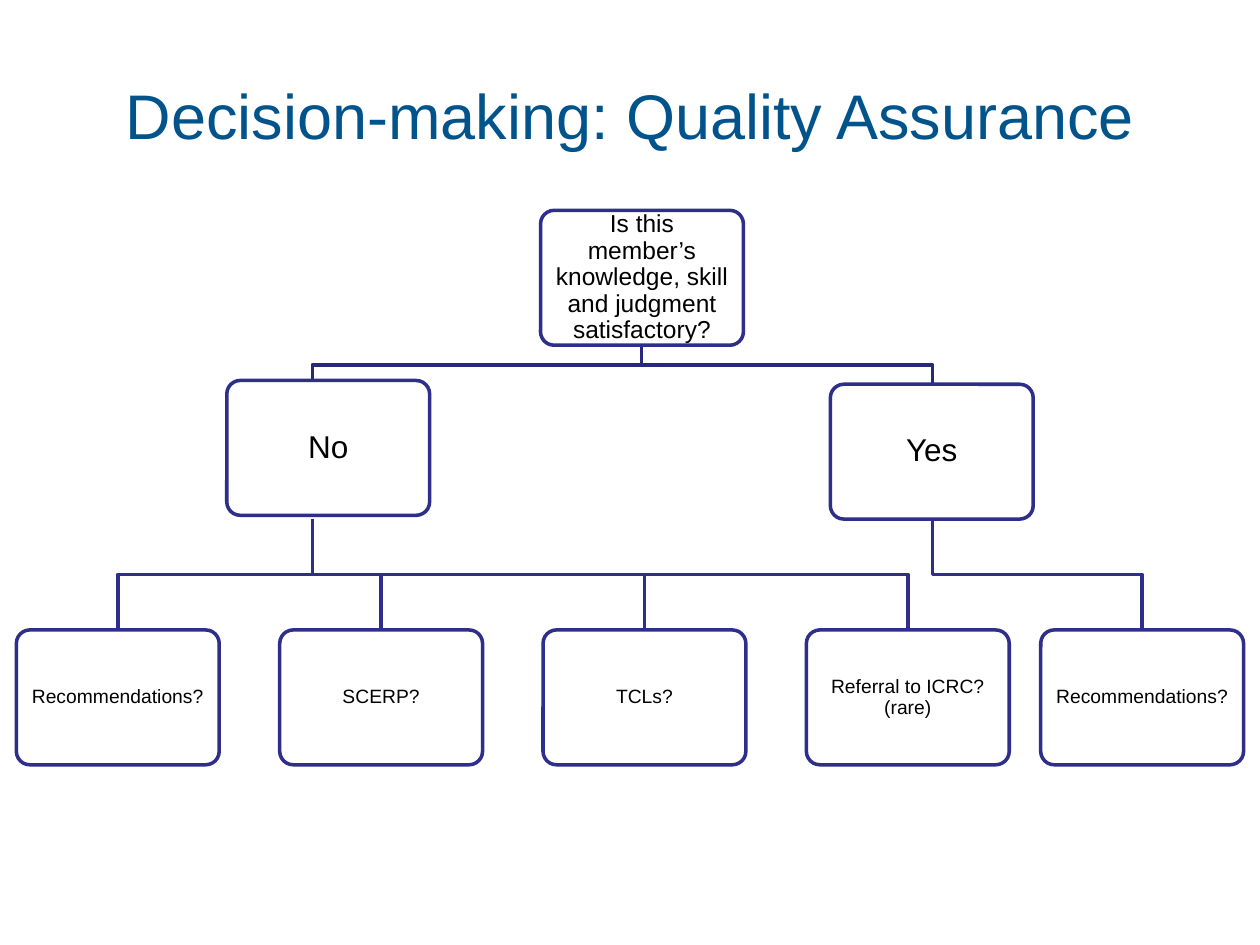
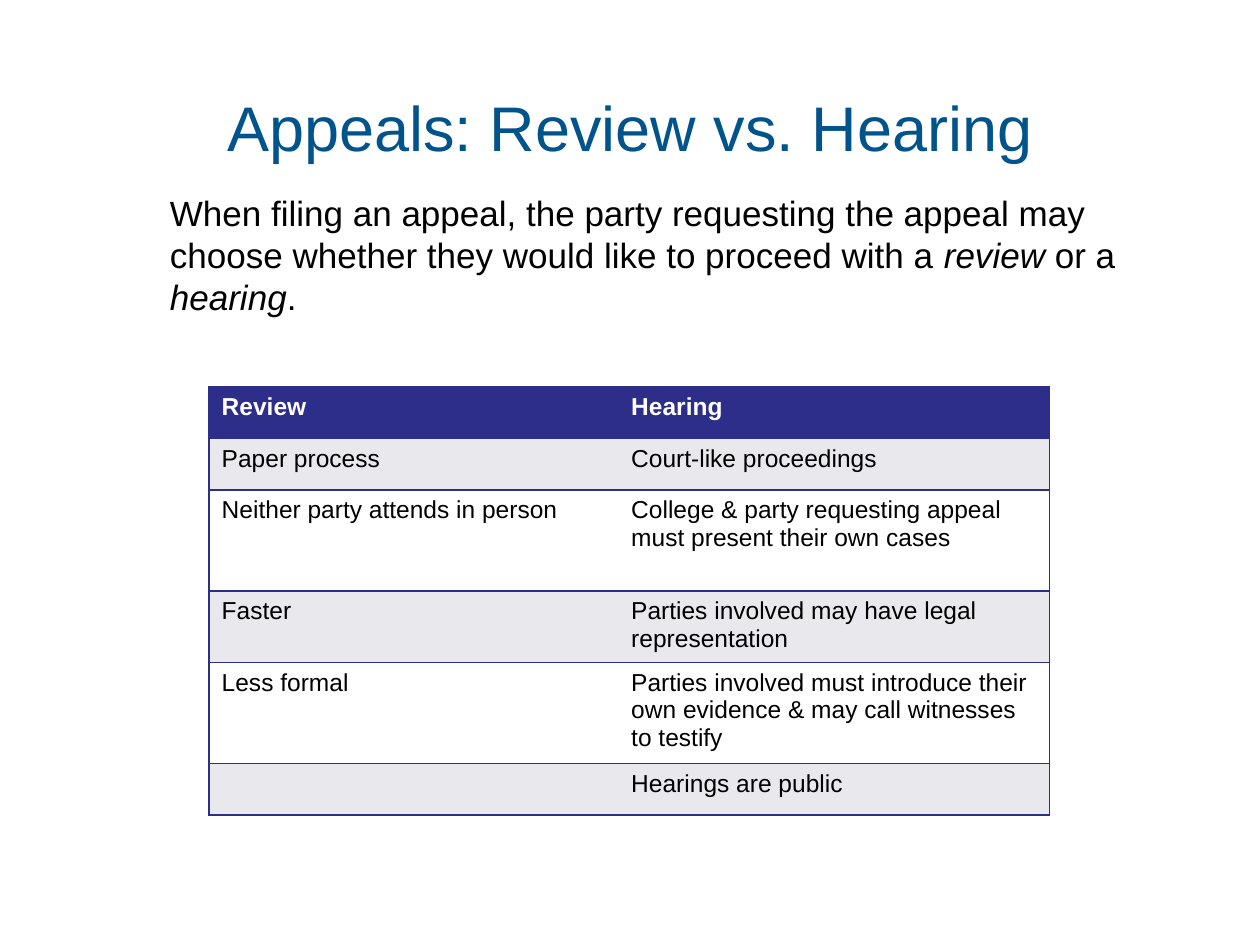
"""Build two slides: a quality assurance decision tree and a review versus hearing table."""
import pptx
import pptx.dml.color
import pptx.enum.shapes
import pptx.enum.text
import pptx.oxml
import pptx.oxml.ns
import pptx.util

Inches = pptx.util.Inches
Pt = pptx.util.Pt
RGBColor = pptx.dml.color.RGBColor
MIDDLE = pptx.enum.text.MSO_ANCHOR.MIDDLE
CENTER = pptx.enum.text.PP_ALIGN.CENTER
COLORS = {
    "title": "00548B", "text": "000000", "white": "FFFFFF", "box_line": "2E2E8B",
    "top_link": "29297B", "table": "2D2D8A", "band": "E8E8ED",
}


def add_text(paragraph, text, size, color="text", **styles):
    run = paragraph.add_run()
    run.text = text
    font_format = {"name": "Arial", "size": Pt(size), "bold": False, "italic": False, **styles}
    for name, value in font_format.items():
        setattr(run.font, name, value)
    run.font.color.rgb = RGBColor.from_string(COLORS[color])


def add_titled_slide(presentation, title, top):
    slide = presentation.slides.add_slide(presentation.slide_layouts[5])
    shape = slide.shapes.title
    place = {"left": Inches(0.71), "top": Inches(top), "width": Inches(8.58), "height": Inches(0.92)}
    for name, value in place.items():
        setattr(shape, name, value)
    shape.text_frame.vertical_anchor = MIDDLE
    shape.text_frame.auto_size = pptx.enum.text.MSO_AUTO_SIZE.NONE
    paragraph = shape.text_frame.paragraphs[0]
    paragraph.alignment = CENTER
    add_text(paragraph, title, 36, "title")
    return slide


presentation = pptx.Presentation()
presentation.slide_width = Inches(10)
presentation.slide_height = Inches(7.5)

slide = add_titled_slide(presentation, "Decision-making: Quality Assurance", 0.45)

box_width, box_height = 1.61, 1.07
leaf_top = 5
boxes = {
    "question": (4.29, 1.67, 14, "Is this member’s knowledge, skill and judgment satisfactory?"),
    "no": (1.8, 3.02, 18, "No"),
    "yes": (6.59, 3.05, 18, "Yes"),
    "yes_leaf": (8.26, leaf_top, 11, "Recommendations?"),
}
no_outcomes = ["Recommendations?", "SCERP?", "TCLs?", "Referral to ICRC? (rare)"]
for index, outcome in enumerate(no_outcomes):
    boxes[f"no_leaf_{index}"] = (0.13 + 2.09 * index, leaf_top, 11, outcome)

no_center, yes_center, question_center = 2.48, 7.4, 5.09
links = [(question_center, 2.74, center, 3.05, "top_link") for center in (no_center, yes_center)]
for name, (left, top, size, text) in boxes.items():
    if "leaf" in name:
        parent_center = yes_center if name == "yes_leaf" else no_center
        links.append((parent_center, 4.12, left + box_width / 2, leaf_top, "box_line"))

for start_x, start_y, end_x, end_y, color in links:
    bend_y = (start_y + end_y) / 2
    builder = slide.shapes.build_freeform(Inches(start_x), Inches(start_y))
    corners = [(start_x, bend_y), (end_x, bend_y), (end_x, end_y)]
    builder.add_line_segments([(Inches(x), Inches(y)) for x, y in corners], close=False)
    link = builder.convert_to_shape()
    link.shadow.inherit = False
    link.fill.background()
    link.line.color.rgb = RGBColor.from_string(COLORS[color])
    link.line.width = Pt(2)

for left, top, size, text in boxes.values():
    box = slide.shapes.add_shape(
        pptx.enum.shapes.MSO_SHAPE.ROUNDED_RECTANGLE,
        Inches(left), Inches(top), Inches(box_width), Inches(box_height))
    box.adjustments[0] = 0.1
    box.shadow.inherit = False
    box.fill.solid()
    box.fill.fore_color.rgb = RGBColor.from_string(COLORS["white"])
    box.line.color.rgb = RGBColor.from_string(COLORS["box_line"])
    box.line.width = Pt(2)
    frame_format = {"word_wrap": True, "vertical_anchor": MIDDLE}
    for side in ("left", "top", "right", "bottom"):
        frame_format[f"margin_{side}"] = Inches(0.07)
    for name, value in frame_format.items():
        setattr(box.text_frame, name, value)
    paragraph = box.text_frame.paragraphs[0]
    paragraph.alignment = CENTER
    paragraph.line_spacing = 0.9
    add_text(paragraph, text, size)

slide = add_titled_slide(presentation, "Appeals: Review vs. Hearing", 0.54)

introduction = slide.shapes.add_textbox(Inches(1.25), Inches(1.47), Inches(7.75), Inches(1.11))
introduction.text_frame.word_wrap = True
paragraph = introduction.text_frame.paragraphs[0]
sentence = [
    ("When filing an appeal, the party requesting the appeal may choose whether "
     "they would like to proceed with a ", False),
    ("review", True), (" or a ", False), ("hearing", True), (".", False),
]
for text, italic in sentence:
    add_text(paragraph, text, 20, italic=italic)

rows = [
    (0.41, "Review", "Hearing"),
    (0.41, "Paper process", "Court-like proceedings"),
    (0.8, "Neither party attends in person",
     "College & party requesting appeal must present their own cases"),
    (0.57, "Faster", "Parties involved may have legal representation"),
    (0.8, "Less formal",
     "Parties involved must introduce their own evidence & may call witnesses to testify"),
    (0.41, "", "Hearings are public"),
]
table = slide.shapes.add_table(
    len(rows), 2, Inches(1.66), Inches(3.07), Inches(6.67), Inches(3.4)).table
for column, width in zip(table.columns, (3.25, 3.42)):
    column.width = Inches(width)

for row_index, (height, *texts) in enumerate(rows):
    table.rows[row_index].height = Inches(height)
    is_header = row_index == 0
    fill_color = "table" if is_header else "band" if row_index % 2 else "white"
    for column_index, text in enumerate(texts):
        cell = table.cell(row_index, column_index)
        properties = cell._tc.get_or_add_tcPr()
        inner_side = "R" if column_index == 0 else "L"
        for side in "LRTB":
            border_fill = "<a:noFill/>" if side == inner_side else (
                f'<a:solidFill><a:srgbClr val="{COLORS["table"]}"/></a:solidFill>')
            properties.append(pptx.oxml.parse_xml(
                f'<a:ln{side} {pptx.oxml.ns.nsdecls("a")} w="{Pt(1)}">{border_fill}</a:ln{side}>'))
        cell.fill.solid()
        cell.fill.fore_color.rgb = RGBColor.from_string(COLORS[fill_color])
        if text:
            add_text(cell.text_frame.paragraphs[0], text, 14,
                     "white" if is_header else "text", bold=is_header)

presentation.save("out.pptx")
